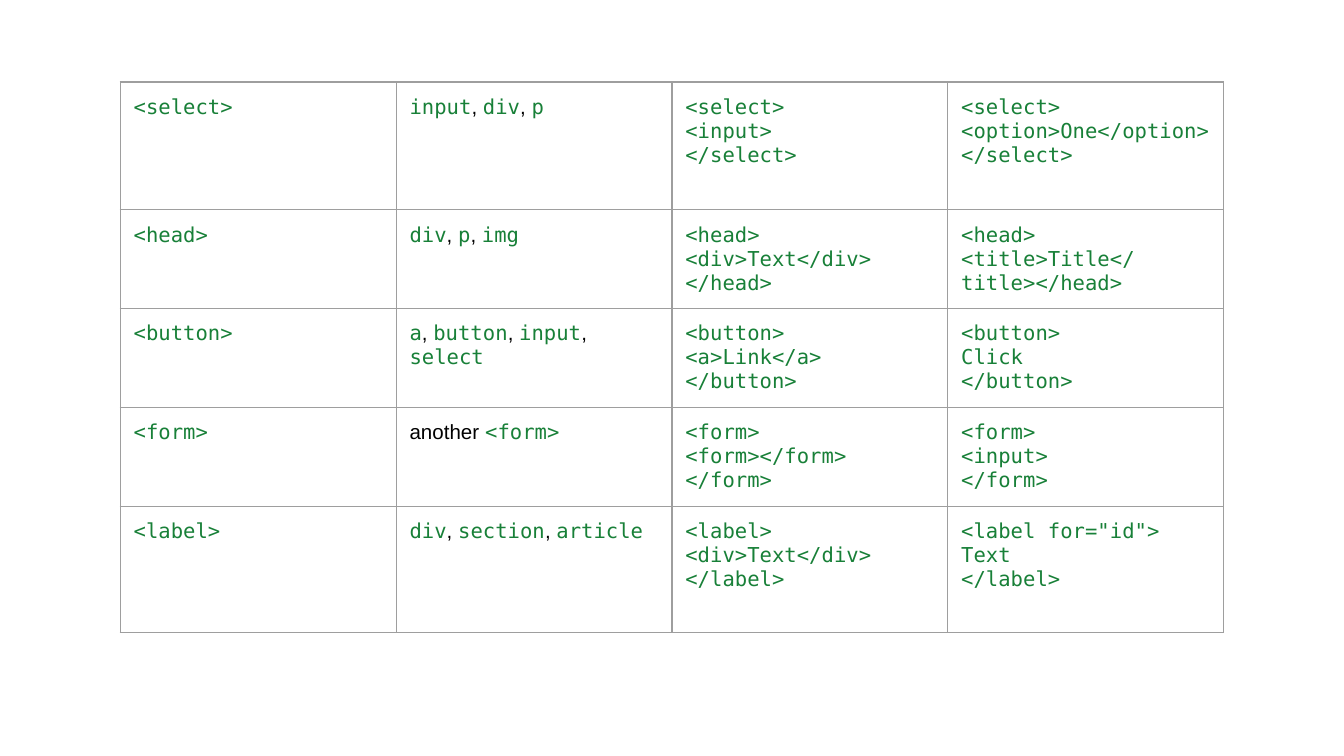
from dataclasses import dataclass

from lxml import etree
from pptx import Presentation
from pptx.dml.color import RGBColor
from pptx.oxml.ns import qn
from pptx.util import Inches, Pt


@dataclass(frozen=True)
class Theme:
    """Colours, fonts and sizes of the slide."""
    code: RGBColor = RGBColor(0x18, 0x80, 0x38)
    text: RGBColor = RGBColor(0, 0, 0)
    rule: str = "9E9E9E"
    mono: str = "DejaVu Sans Mono"
    sans: str = "Arial"
    size: float = 11
    line: float = 0.75
    pad: float = 0.1


THEME = Theme()
WIDE = 10
TALL = WIDE * 9 / 16
SPAN = 8.21
HEIGHTS = (0.95, 0.71, 0.71, 0.71, 0.94)
ROWS = (
    ("<select>", "", ("input", "div", "p"),
     ("<select>", "<input>", "</select>"),
     ("<select>", "<option>One</option>", "</select>")),
    ("<head>", "", ("div", "p", "img"),
     ("<head>", "<div>Text</div>", "</head>"),
     ("<head>", "<title>Title</title></head>")),
    ("<button>", "", ("a", "button", "input", "select"),
     ("<button>", "<a>Link</a>", "</button>"),
     ("<button>", "Click", "</button>")),
    ("<form>", "another ", ("<form>",),
     ("<form>", "<form></form>", "</form>"),
     ("<form>", "<input>", "</form>")),
    ("<label>", "", ("div", "section", "article"),
     ("<label>", "<div>Text</div>", "</label>"),
     ('<label for="id">', "Text", "</label>")),
)


def add_run(para, text, code=True):
    """Add one run, as code or as plain text."""
    run = para.add_run()
    run.text = text
    run.font.size = Pt(THEME.size)
    run.font.name = THEME.mono if code else THEME.sans
    run.font.color.rgb = THEME.code if code else THEME.text


def add_code(cell, lines):
    """Write each code line as its own paragraph."""
    frame = cell.text_frame
    for i, line in enumerate(lines):
        para = frame.add_paragraph() if i else frame.paragraphs[0]
        add_run(para, line)


def add_names(cell, lead, names):
    """Write a plain lead and code names split by plain commas."""
    para = cell.text_frame.paragraphs[0]
    for i, name in enumerate(names):
        gap = ", " if i else lead
        if gap:
            add_run(para, gap, code=False)
        add_run(para, name)


def style_cell(cell):
    """Set the margins, borders and empty fill of a cell."""
    pad = Inches(THEME.pad)
    cell.margin_left = cell.margin_right = pad
    cell.margin_top = cell.margin_bottom = pad
    props = cell._tc.get_or_add_tcPr()
    for side in ("lnL", "lnR", "lnT", "lnB"):
        edge = etree.SubElement(props, qn(f"a:{side}"), w=str(Pt(THEME.line)))
        fill = etree.SubElement(edge, qn("a:solidFill"))
        etree.SubElement(fill, qn("a:srgbClr"), val=THEME.rule)
    cell.fill.background()


def add_rules(slide, left, top, width, heights):
    """Draw the table of nesting rules in the given box."""
    cols = 4
    table = slide.shapes.add_table(
        len(ROWS), cols, Inches(left), Inches(top),
        Inches(width), Inches(sum(heights))).table
    table.first_row = table.horz_banding = False
    for col in table.columns:
        col.width = Inches(width / cols)
    for row, high, (tag, lead, names, bad, good) in zip(
            table.rows, heights, ROWS):
        row.height = Inches(high)
        cells = list(row.cells)
        for cell in cells:
            style_cell(cell)
        add_code(cells[0], (tag,))
        add_names(cells[1], lead, names)
        add_code(cells[2], bad)
        add_code(cells[3], good)


def main():
    """Build and save the slide."""
    deck = Presentation()
    deck.slide_width, deck.slide_height = Inches(WIDE), Inches(TALL)
    slide = deck.slides.add_slide(deck.slide_layouts[6])
    add_rules(slide, (WIDE - SPAN) / 2, 0.61, SPAN, HEIGHTS)
    deck.save("out.pptx")


if __name__ == "__main__":
    main()
